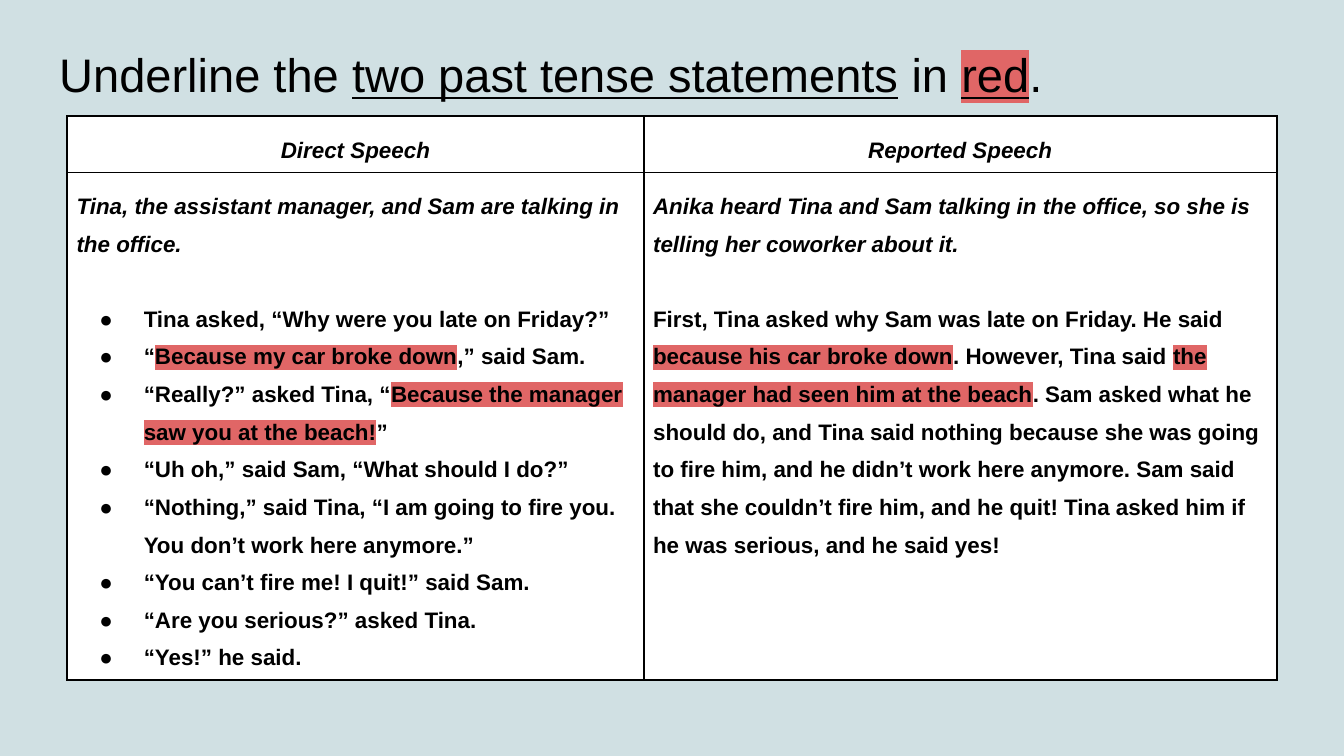
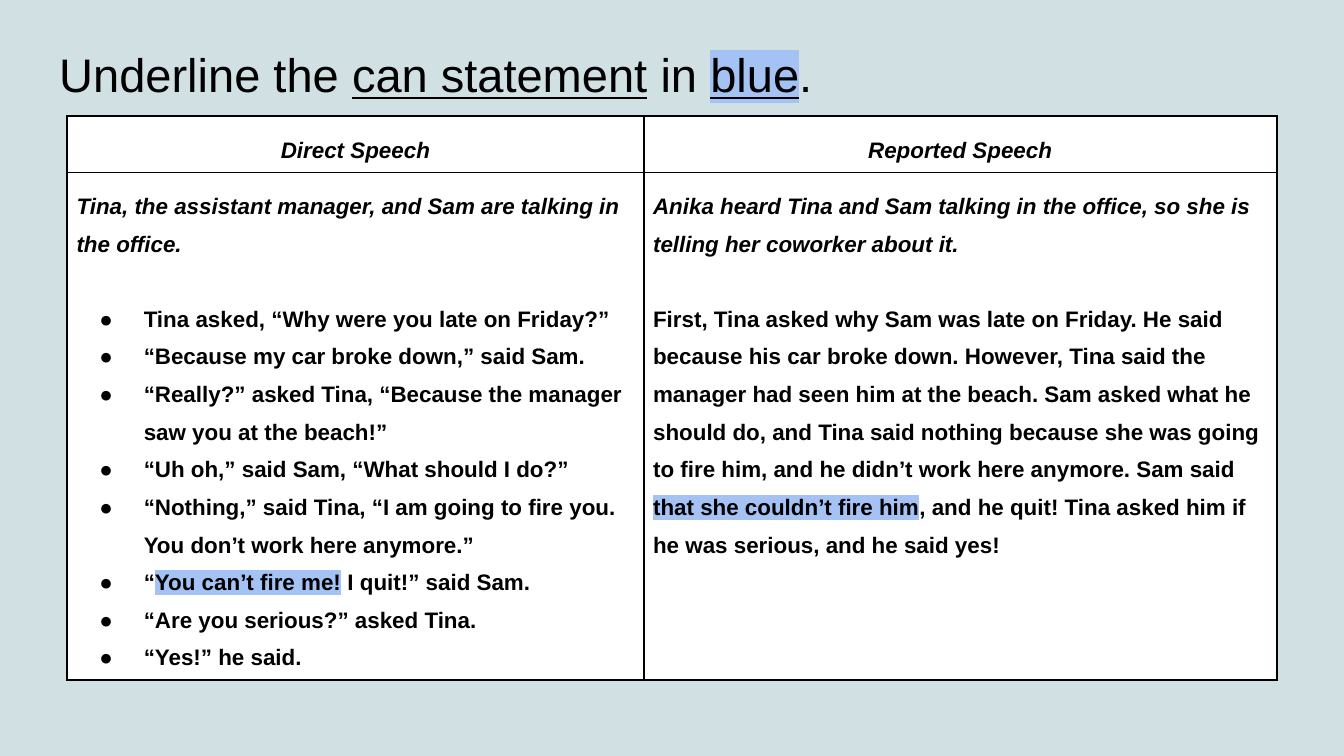
from dataclasses import dataclass

from lxml.etree import SubElement
from pptx import Presentation
from pptx.dml.color import RGBColor
from pptx.enum.text import MSO_ANCHOR, MSO_AUTO_SIZE, PP_ALIGN
from pptx.oxml import parse_xml
from pptx.oxml.ns import nsdecls, qn
from pptx.util import Emu, Inches, Pt

WIDTH = Inches(10)
HEIGHT = Emu(WIDTH * 9 // 16)
TITLE_ONLY = 5


@dataclass(frozen=True)
class Theme:
    font: str = "Arial"
    background: str = "D0E0E3"
    paper: str = "FFFFFF"
    ink: str = "000000"
    title_size: float = 25.2
    body_size: float = 12
    line_spacing: float = 1.5
    intro_gap: float = 20
    border: float = 1
    title_inset: float = 0.1
    cell_inset: float = 0.07
    bullet_margin: float = 0.5
    bullet_indent: float = -0.33


@dataclass(frozen=True)
class Exercise:
    target: str
    color_name: str
    color: str
    answers: tuple[str, ...]


@dataclass(frozen=True)
class Column:
    heading: str
    share: float
    intro: str
    lines: tuple[str, ...]
    bulleted: bool


THEME = Theme()
HEADER_SHARE, BODY_SHARE = 6.22, 55.64

COLUMNS = (
    Column(
        "Direct Speech", 42.9,
        "Tina, the assistant manager, and Sam are talking in the office.",
        (
            "Tina asked, “Why were you late on Friday?”",
            "“Because my car broke down,” said Sam.",
            "“Really?” asked Tina, “Because the manager saw you at the beach!”",
            "“Uh oh,” said Sam, “What should I do?”",
            "“Nothing,” said Tina, “I am going to fire you. "
            "You don’t work here anymore.”",
            "“You can’t fire me! I quit!” said Sam.",
            "“Are you serious?” asked Tina.",
            "“Yes!” he said.",
        ),
        True,
    ),
    Column(
        "Reported Speech", 47.1,
        "Anika heard Tina and Sam talking in the office, "
        "so she is telling her coworker about it.",
        (
            "First, Tina asked why Sam was late on Friday. He said because his car "
            "broke down. However, Tina said the manager had seen him at the beach. "
            "Sam asked what he should do, and Tina said nothing because she was going "
            "to fire him, and he didn’t work here anymore. Sam said that she couldn’t "
            "fire him, and he quit! Tina asked him if he was serious, and he said yes!",
        ),
        False,
    ),
)

EXERCISES = (
    Exercise("two past tense statements", "red", "E06666", (
        "Because my car broke down",
        "Because the manager saw you at the beach!",
        "because his car broke down",
        "the manager had seen him at the beach",
    )),
    Exercise("can statement", "blue", "A4C2F4", (
        "You can’t fire me!",
        "that she couldn’t fire him",
    )),
)


def across(percent: float) -> Emu:
    return Emu(round(WIDTH * percent / 100))


def down(percent: float) -> Emu:
    return Emu(round(HEIGHT * percent / 100))


def set_insets(box, inches: float) -> None:
    box.margin_left = box.margin_right = Inches(inches)
    box.margin_top = box.margin_bottom = Inches(inches)


def add_run(p, text: str, size: float, highlight: str | None = None, *,
            bold: bool = False, italic: bool = False,
            underline: bool = False) -> None:
    r = p.add_run()
    r.text = text
    font = r.font
    font.size, font.bold, font.italic = Pt(size), bold, italic
    font.underline = underline
    font.color.rgb = RGBColor.from_string(THEME.ink)
    if highlight:
        mark = parse_xml(f'<a:highlight {nsdecls("a")}>'
                         f'<a:srgbClr val="{highlight}"/></a:highlight>')
        r._r.rPr.find(qn("a:solidFill")).addnext(mark)
    font.name = THEME.font


def split_answers(text: str, answers: tuple[str, ...]) -> list[tuple[str, bool]]:
    """Cut text into pieces, each flagged when it is an answer."""
    pieces = [(text, False)]
    for answer in answers:
        cut = []
        for piece, marked in pieces:
            before, found, after = piece.partition(answer)
            if marked or not found:
                cut.append((piece, marked))
            else:
                cut += [(before, False), (found, True), (after, False)]
        pieces = cut
    return [piece for piece in pieces if piece[0]]


def add_bullet(p) -> None:
    pPr = p._p.get_or_add_pPr()
    pPr.set("marL", str(Inches(THEME.bullet_margin)))
    pPr.set("indent", str(Inches(THEME.bullet_indent)))
    color = SubElement(pPr, qn("a:buClr"))
    SubElement(color, qn("a:srgbClr"), val=THEME.ink)
    SubElement(pPr, qn("a:buFont"), typeface=THEME.font)
    SubElement(pPr, qn("a:buChar"), char="●")


def format_cell(cell) -> None:
    set_insets(cell, THEME.cell_inset)
    cell.fill.solid()
    cell.fill.fore_color.rgb = RGBColor.from_string(THEME.paper)
    tcPr = cell._tc.get_or_add_tcPr()
    for i, side in enumerate("LRTB"):
        tcPr.insert(i, parse_xml(
            f'<a:ln{side} {nsdecls("a")} w="{Pt(THEME.border)}"><a:solidFill>'
            f'<a:srgbClr val="{THEME.ink}"/></a:solidFill></a:ln{side}>'))


def write_heading(cell, heading: str) -> None:
    p = cell.text_frame.paragraphs[0]
    p.alignment = PP_ALIGN.CENTER
    p.line_spacing = THEME.line_spacing
    add_run(p, heading, THEME.body_size, bold=True, italic=True)


def write_body(cell, column: Column, exercise: Exercise) -> None:
    tf = cell.text_frame
    p = tf.paragraphs[0]
    p.line_spacing = THEME.line_spacing
    p.space_after = Pt(THEME.intro_gap)
    add_run(p, column.intro, THEME.body_size, bold=True, italic=True)
    for line in column.lines:
        p = tf.add_paragraph()
        p.line_spacing = THEME.line_spacing
        if column.bulleted:
            add_bullet(p)
        for text, marked in split_answers(line, exercise.answers):
            add_run(p, text, THEME.body_size,
                    exercise.color if marked else None, bold=True)


def add_title(s, exercise: Exercise) -> None:
    title = s.shapes.title
    title.left, title.top = across(3.4), down(4.2)
    title.width, title.height = across(93.2), down(11.2)
    tf = title.text_frame
    set_insets(tf, THEME.title_inset)
    tf.word_wrap = True
    tf.auto_size = MSO_AUTO_SIZE.NONE
    tf.vertical_anchor = MSO_ANCHOR.MIDDLE
    p = tf.paragraphs[0]
    p.alignment = PP_ALIGN.LEFT
    size = THEME.title_size
    add_run(p, "Underline the ", size)
    add_run(p, exercise.target, size, underline=True)
    add_run(p, " in ", size)
    add_run(p, exercise.color_name, size, exercise.color, underline=True)
    add_run(p, ".", size)


def add_speech_table(s, exercise: Exercise) -> None:
    table = s.shapes.add_table(
        2, len(COLUMNS), across(5), down(15.35),
        across(sum(c.share for c in COLUMNS)),
        down(HEADER_SHARE + BODY_SHARE)).table
    table.first_row = table.horz_banding = False
    for row, share in zip(table.rows, (HEADER_SHARE, BODY_SHARE)):
        row.height = down(share)
    for i, column in enumerate(COLUMNS):
        table.columns[i].width = across(column.share)
        write_heading(table.cell(0, i), column.heading)
        write_body(table.cell(1, i), column, exercise)
    for cell in table.iter_cells():
        format_cell(cell)


def main() -> None:
    prs = Presentation()
    prs.slide_width, prs.slide_height = WIDTH, HEIGHT
    for exercise in EXERCISES:
        s = prs.slides.add_slide(prs.slide_layouts[TITLE_ONLY])
        s.background.fill.solid()
        s.background.fill.fore_color.rgb = RGBColor.from_string(THEME.background)
        add_title(s, exercise)
        add_speech_table(s, exercise)
    prs.save("out.pptx")


if __name__ == "__main__":
    main()
